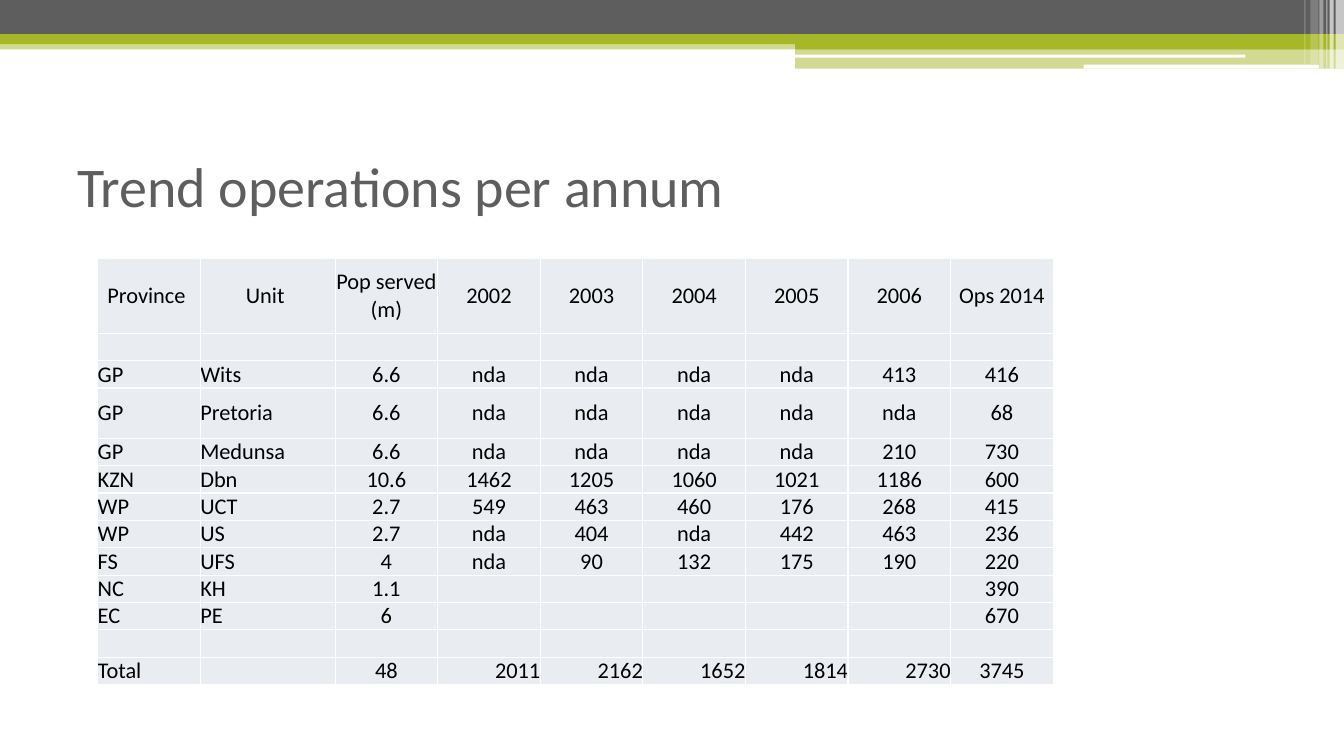
from lxml import etree
from pptx import Presentation
from pptx import util as u
from pptx.dml import color
from pptx.enum import shapes, text
from pptx.oxml import ns

Pt = u.Pt
GRAY = color.RGBColor(0x5E, 0x5E, 0x5E)
LIME = color.RGBColor(0xA6, 0xB7, 0x27)
WHITE = color.RGBColor(0xFF, 0xFF, 0xFF)
BLACK = color.RGBColor(0, 0, 0)
PALE = color.RGBColor(0xE9, 0xED, 0xF2)
LEFT, MID, RIGHT = text.PP_ALIGN.LEFT, text.PP_ALIGN.CENTER, text.PP_ALIGN.RIGHT
RECT = shapes.MSO_SHAPE.RECTANGLE
ROUND = shapes.MSO_SHAPE.ROUNDED_RECTANGLE

BANDS = [
    (0, 28.8, 960, 6.48, LIME, 50, RECT),
    (0, 0, 960, 24.4, GRAY, 100, RECT),
    (0, 24.4, 960, 7.2, LIME, 100, RECT),
    (568, 28.1, 392, 7.2, LIME, 100, RECT),
    (568, 34.8, 392, 14.2, LIME, 50, RECT),
    (567.5, 39, 322, 2.16, WHITE, 100, ROUND),
    (774, 46.2, 168, 2.88, WHITE, 100, ROUND),
]
BARS = [
    (954, 6, 49, 65),
    (949.7, 2.9, 49, 65),
    (947.5, 0.72, 49, 60),
    (942.5, 2.9, 49, 40),
    (936, 5.76, 46, 20),
    (931.7, 0.72, 46, 30),
]
ROWS = [
    ["Province ", "Unit ", "Pop served (m)", "2002", "2003", "2004", "2005", "2006", "Ops 2014"],
    [""] * 9,
    ["GP", "Wits", "6.6", "nda", "nda", "nda", "nda", "413", "416"],
    ["GP", "Pretoria", "6.6", "nda", "nda", "nda", "nda", "nda", "68"],
    ["GP", "Medunsa", "6.6", "nda", "nda", "nda", "nda", "210", "730"],
    ["KZN", "Dbn", "10.6", "1462", "1205", "1060", "1021", "1186", "600"],
    ["WP", "UCT", "2.7", "549", "463", "460", "176", "268", "415"],
    ["WP", "US", "2.7", "nda", "404", "nda", "442", "463", "236"],
    ["FS", "UFS", "4", "nda", "90", "132", "175", "190", "220"],
    ["NC", "KH", "1.1", "", "", "", "", "", "390"],
    ["EC", "PE", "6", "", "", "", "", "", "670"],
    [""] * 9,
    ["Total", "", "48", "2011", "2162", "1652", "1814", "2730", "3745"],
]
WIDTHS = [73.3, 96.3] + [73.3] * 7
HEIGHTS = [53.5, 19.55, 19.55, 36] + [19.55] * 9


class Deck:
    face = "Calibri"

    def __init__(self, slide):
        self.slide = slide

    def style(self, para, size, ink, align=LEFT):
        para.alignment = align
        para.font.name = self.face
        para.font.size = Pt(size)
        para.font.color.rgb = ink

    def band(self, x, y, w, h, ink, alpha=100, kind=RECT):
        box = self.slide.shapes.add_shape(kind, Pt(x), Pt(y), Pt(w), Pt(h))
        box.shadow.inherit = False
        box.line.fill.background()
        box.fill.solid()
        box.fill.fore_color.rgb = ink
        if alpha < 100:
            tint = box.fill._xPr.find(".//" + ns.qn("a:srgbClr"))
            etree.SubElement(tint, ns.qn("a:alpha"), val=str(alpha * 1000))

    def title(self, words, x, y, w, h):
        frame = self.slide.shapes.add_textbox(Pt(x), Pt(y), Pt(w), Pt(h)).text_frame
        frame.word_wrap = True
        frame.vertical_anchor = text.MSO_ANCHOR.MIDDLE
        frame.text = words
        self.style(frame.paragraphs[0], 40, GRAY)

    def border(self, cell):
        props = cell._tc.get_or_add_tcPr()
        for side in "LRTB":
            edge = etree.SubElement(props, ns.qn("a:ln" + side), w=str(Pt(1)))
            fill = etree.SubElement(edge, ns.qn("a:solidFill"))
            etree.SubElement(fill, ns.qn("a:srgbClr"), val=str(WHITE))

    def cell(self, cell, words, align):
        self.border(cell)
        cell.fill.solid()
        cell.fill.fore_color.rgb = PALE
        cell.margin_left = cell.margin_right = cell.margin_top = cell.margin_bottom = 0
        cell.vertical_anchor = text.MSO_ANCHOR.MIDDLE
        cell.text = words
        para = cell.text_frame.paragraphs[0]
        self.style(para, 16, BLACK, align)
        if not words:
            etree.SubElement(para._p, ns.qn("a:endParaRPr"), sz="1600")

    def table(self, rows, widths, heights, x, y):
        grid = self.slide.shapes.add_table(
            len(rows), len(widths), Pt(x), Pt(y), Pt(sum(widths)), Pt(sum(heights))
        ).table
        grid.first_row = grid.horz_banding = False
        for col, width in zip(grid.columns, widths):
            col.width = Pt(width)
        for r, row in enumerate(rows):
            grid.rows[r].height = Pt(heights[r])
            for c, words in enumerate(row):
                align = MID
                if r and c < 2:
                    align = LEFT
                elif r == len(rows) - 1 and 3 <= c <= 7:
                    align = RIGHT
                self.cell(grid.cell(r, c), words, align)


def main():
    prs = Presentation()
    prs.slide_width, prs.slide_height = Pt(960), Pt(540)
    deck = Deck(prs.slides.add_slide(prs.slide_layouts[6]))
    for band in BANDS:
        deck.band(*band)
    for x, w, h, alpha in BARS:
        deck.band(x, 0, w, h, WHITE, alpha)
    deck.title("Trend operations per annum", 48, 90, 864, 84)
    deck.table(ROWS, WIDTHS, HEIGHTS, 69.8, 184.6)
    prs.save("out.pptx")


if __name__ == "__main__":
    main()
